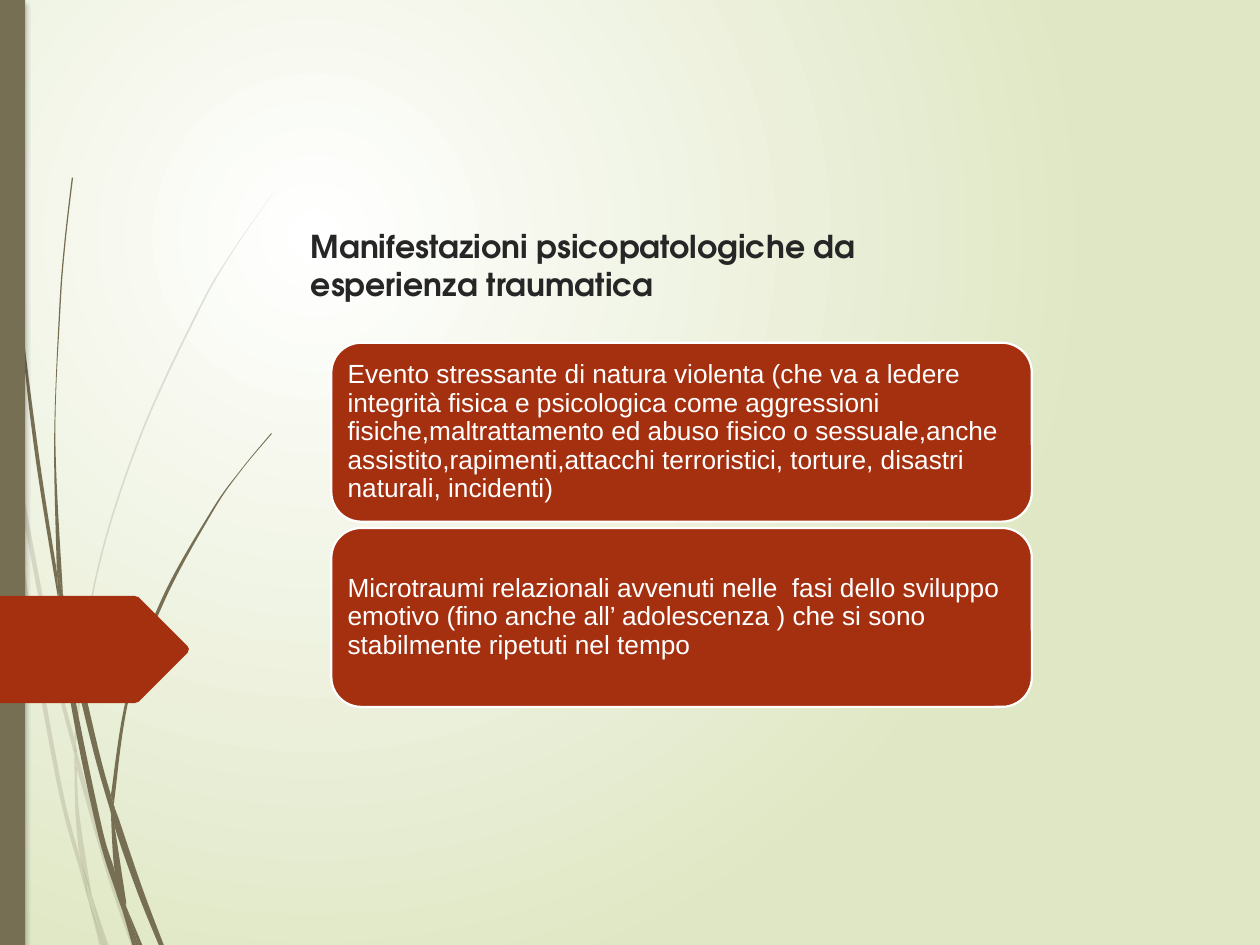
from lxml import etree
from pptx import Presentation
from pptx.dml.color import RGBColor
from pptx.enum import shapes, text
from pptx.oxml.ns import qn
from pptx.util import Inches, Pt

STEM, RED, WHITE = "766F54", "A53010", "FFFFFF"

# Each grass piece has two edges: one out, one back.
PALE_GRASS = [
    ([(0.08, 3.5), (0.06, 3.22), (0, 2.82)], [(0, 2.99), (0.07, 3.44)]),
    ([(0.12, 3.76), (0.4, 5.22), (0.59, 5.99)], [(0.59, 5.86), (0.43, 5.2), (0.1, 3.45)]),
    ([(0.61, 6.1), (0.85, 6.94), (1.04, 7.5)], [(1.08, 7.5), (0.88, 6.91), (0.64, 6.07), (0.61, 5.96)]),
    ([(0.73, 7.11), (0.83, 7.5)], [(0.86, 7.5)]),
    ([(0.08, 3.5), (0.19, 4.7), (0.45, 6.21), (0.64, 6.93), (0.7, 7.14)],
     [(0.69, 7.07), (0.64, 6.83), (0.48, 6.19), (0.22, 4.69), (0.12, 3.76)]),
    ([(0.59, 5.99), (0.6, 6.46), (0.64, 6.83), (0.73, 7.11)],
     [(0.72, 7.06), (0.63, 6.46), (0.61, 6.1)]),
    ([(0.59, 5.84), (0.75, 4.61), (1.1, 3.48), (1.58, 2.44), (1.86, 1.97), (2.17, 1.53)],
     [(2.17, 1.53), (1.86, 1.98), (1.59, 2.45), (1.11, 3.49), (0.76, 4.62), (0.61, 5.84), (0.61, 5.96)]),
    ([(0.7, 7.14), (0.79, 7.5)], [(0.82, 7.5)]),
    ([(0.59, 5.86), (0.59, 5.99), (0.61, 6.08)], [(0.61, 6.1), (0.61, 5.96)]),
    ([(0.65, 6.83), (0.7, 7.14), (0.82, 7.5)], [(0.83, 7.5), (0.73, 7.11), (0.67, 6.92)]),
]
DARK_GRASS = [
    ([(0.02, 0), (0.03, 0.48), (0.05, 1.1), (0.14, 2.33), (0.27, 3.55), (0.47, 4.81)],
     [(0.45, 4.53), (0.3, 3.55), (0.15, 2.32), (0.06, 1.09), (0.04, 0.48), (0.03, 0)]),
    ([(0.5, 4.72), (0.53, 5.05), (0.73, 5.92), (0.88, 6.45)], [(0.88, 6.31), (0.77, 5.9), (0.5, 4.72)]),
    ([(0.91, 6.41), (0.91, 6.56), (1.09, 7.08), (1.26, 7.5)], [(1.3, 7.5), (1.13, 7.05), (0.94, 6.49)]),
    ([(0.47, 4.77), (0.56, 5.57), (0.77, 6.59), (0.92, 7.08), (0.97, 7.22)],
     [(0.96, 7.17), (0.91, 6.91), (0.81, 6.57), (0.6, 5.56), (0.53, 5.05)]),
    ([(0.5, 4.72), (0.44, 3.49), (0.48, 2.45), (0.52, 1.93), (0.58, 1.41)],
     [(0.57, 1.41), (0.51, 1.93), (0.47, 2.45), (0.43, 3.49), (0.45, 4.49)]),
    ([(1, 7.19), (1.1, 7.5)], [(1.13, 7.5)]),
    ([(0.45, 4.49), (0.47, 4.77), (0.53, 5.05)], [(0.5, 4.72)]),
    ([(0.88, 6.31), (1.01, 5.51), (1.29, 4.74), (1.68, 4.05), (1.91, 3.73), (2.15, 3.44)],
     [(2.16, 3.44), (1.91, 3.74), (1.69, 4.06), (1.31, 4.76), (1.03, 5.52), (0.91, 6.33), (0.91, 6.41)]),
    ([(0.97, 7.22), (1.05, 7.5)], [(1.08, 7.5)]),
    ([(0.88, 6.45), (0.91, 6.91), (1, 7.19)], [(1, 7.15), (0.91, 6.56)]),
    ([(0.88, 6.31), (0.88, 6.45), (0.91, 6.56)], [(0.91, 6.41)]),
    ([(0.91, 6.91), (0.97, 7.22), (1.08, 7.5)], [(1.1, 7.5), (1, 7.19)]),
]
ARROW = [(-0.03, 4.73), (1.07, 4.73), (1.1, 4.74), (1.49, 5.13), (1.5, 5.15),
         (1.49, 5.18), (1.1, 5.57), (1.07, 5.58), (-0.03, 5.58)]

TITLE = "Manifestazioni psicopatologiche da esperienza traumatica"
CARDS = [
    "Evento stressante di natura violenta (che va a ledere integrità fisica e psicologica come "
    "aggressioni fisiche,maltrattamento ed abuso fisico o sessuale,anche assistito,rapimenti,"
    "attacchi terroristici, torture, disastri naturali, incidenti)",
    "Microtraumi relazionali avvenuti nelle  fasi dello sviluppo emotivo (fino anche all’ "
    "adolescenza ) che si sono stabilmente ripetuti nel tempo",
]


def color(value):
    return RGBColor.from_string(value)


def paint(shape, fill, alpha=None):
    shape.shadow.inherit = False
    shape.fill.solid()
    shape.fill.fore_color.rgb = color(fill)
    shape.line.fill.background()
    if alpha is not None:
        rgb = shape.fill._xPr.find(".//" + qn("a:srgbClr"))
        etree.SubElement(rgb, qn("a:alpha"), val=str(alpha * 1000))


def add_outline(slide, points, fill, alpha=None):
    corners = [(Inches(x), Inches(y)) for x, y in points]
    builder = slide.shapes.build_freeform(*corners[0])
    builder.add_line_segments(corners[1:], close=True)
    shape = builder.convert_to_shape()
    paint(shape, fill, alpha)
    return shape


def bend(shape, edges):
    """Turn the straight segments within each edge into Bezier curves."""
    lines = list(shape._element.iter(qn("a:lnTo")))
    left, top = (min(values) for values in zip(*(point for edge in edges for point in edge)))
    first = 0
    for edge in edges:
        padded = [edge[0], *edge, edge[-1]]
        quads = zip(padded, padded[1:], padded[2:], padded[3:])
        for line, (before, start, end, after) in zip(lines[first:], quads):
            curve = etree.Element(qn("a:cubicBezTo"))
            for anchor, tail, head in ((start, before, end), (end, after, start)):
                x, y = (a + (h - t) / 6 for a, t, h in zip(anchor, tail, head))
                etree.SubElement(curve, qn("a:pt"), x=str(Inches(x - left)), y=str(Inches(y - top)))
            curve.append(line[0])
            line.getparent().replace(line, curve)
        first += len(edge)


def add_grass(slide, pieces, alpha=None):
    for out, back in pieces:
        bend(add_outline(slide, out + back, STEM, alpha), (out, back))


def set_background(slide):
    fill = slide.background.fill
    fill.gradient()
    for stop, value in zip(fill.gradient_stops, (WHITE, "DFE7C4")):
        stop.color.rgb = color(value)
    gradient = slide._element.find(".//" + qn("a:gradFill"))
    gradient.remove(gradient.find(qn("a:lin")))
    circle = etree.SubElement(gradient, qn("a:path"), {"path": "circle"})
    etree.SubElement(circle, qn("a:fillToRect"), l="25000", t="25000", r="75000", b="75000")


def add_side_bar(slide):
    bar = slide.shapes.add_shape(shapes.MSO_SHAPE.RECTANGLE, 0, 0, Inches(0.2), Inches(7.5))
    paint(bar, STEM)
    effects = bar._element.spPr.find(qn("a:effectLst"))
    shadow = etree.SubElement(effects, qn("a:outerShdw"), blurRad=str(Pt(3)),
                              dist=str(Pt(2)), dir="5400000", rotWithShape="0")
    black = etree.SubElement(shadow, qn("a:srgbClr"), val="000000")
    etree.SubElement(black, qn("a:alpha"), val="25000")


def write(shape, words, font_name, size, font_color, anchor, bold=False):
    frame = shape.text_frame
    frame.word_wrap = True
    frame.vertical_anchor = anchor
    paragraph = frame.paragraphs[0]
    paragraph.text = words
    paragraph.alignment = text.PP_ALIGN.LEFT
    font = paragraph.font
    font.name, font.size, font.bold = font_name, Pt(size), bold
    font.color.rgb = color(font_color)
    return paragraph


def add_title(slide):
    box = slide.shapes.add_textbox(Inches(2.37), Inches(0.44), Inches(5.87), Inches(2.01))
    write(box, TITLE, "TeX Gyre Adventor", 18, "262626", text.MSO_ANCHOR.BOTTOM, bold=True)


def add_card(slide, top, words):
    card = slide.shapes.add_shape(shapes.MSO_SHAPE.ROUNDED_RECTANGLE,
                                  Inches(2.63), Inches(top), Inches(5.56), Inches(1.42))
    paint(card, RED)
    card.line.color.rgb = color(WHITE)
    card.line.width = Pt(1.25)
    frame = card.text_frame
    frame.margin_left = frame.margin_right = Inches(0.06)
    frame.margin_top = frame.margin_bottom = Inches(0.06)
    paragraph = write(card, words, "Arial", 15, WHITE, text.MSO_ANCHOR.MIDDLE)
    paragraph.line_spacing = 0.9


def main():
    presentation = Presentation()
    presentation.slide_width, presentation.slide_height = Inches(10), Inches(7.5)
    slide = presentation.slides.add_slide(presentation.slide_layouts[6])
    set_background(slide)
    add_grass(slide, PALE_GRASS, alpha=20)
    add_grass(slide, DARK_GRASS)
    add_side_bar(slide)
    add_outline(slide, ARROW, RED)
    add_title(slide)
    for index, words in enumerate(CARDS):
        add_card(slide, 2.72 + 1.47 * index, words)
    presentation.save("out.pptx")


if __name__ == "__main__":
    main()
